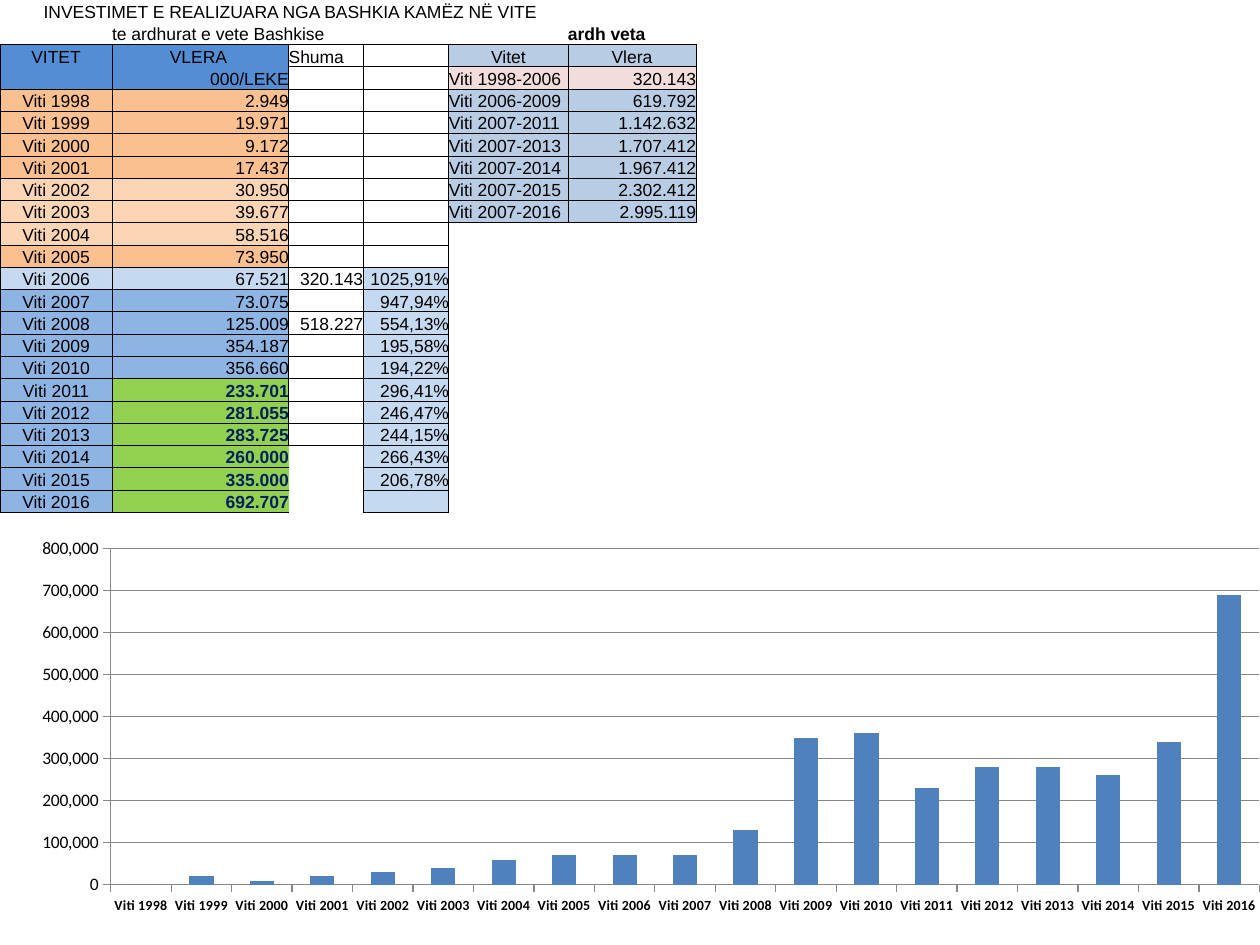
from lxml.etree import SubElement
from pptx import Presentation
from pptx.chart.data import CategoryChartData
from pptx.dml.color import RGBColor
from pptx.enum.chart import XL_CHART_TYPE, XL_TICK_MARK
from pptx.enum.text import MSO_ANCHOR, PP_ALIGN
from pptx.oxml import parse_xml
from pptx.oxml.ns import nsdecls, qn
from pptx.util import Cm, Pt

BLACK, NAVY = "000000", "002060"
BLUE, MID_BLUE, PALE_BLUE, STEEL = "538ED5", "8DB4E3", "C5D9F1", "B8CCE4"
ORANGE, PEACH, GREEN, PINK = "FAC090", "FCD5B4", "92D050", "F2DDDC"
LEFT, CENTER, RIGHT = PP_ALIGN.LEFT, PP_ALIGN.CENTER, PP_ALIGN.RIGHT


def color(code):
    return RGBColor.from_string(code)


def format_cell(cell, sides, text="", align=LEFT, fill=None, ink=BLACK, bold=False):
    """Fill in one cell; sides names its ruled edges by the letters L, R, T, B."""
    cell_format = {"margin_left": 0, "margin_right": 0, "margin_top": 0,
                   "margin_bottom": 0, "vertical_anchor": MSO_ANCHOR.BOTTOM}
    for name, value in cell_format.items():
        setattr(cell, name, value)
    properties = cell._tc.get_or_add_tcPr()
    for side in "LRTB":
        line = SubElement(properties, qn(f"a:ln{side}"), w=str(Pt(0.5)))
        if side in sides:
            paint = SubElement(line, qn("a:solidFill"))
            SubElement(paint, qn("a:srgbClr"), val=BLACK)
        else:
            SubElement(line, qn("a:noFill"))
    if fill:
        cell.fill.solid()
        cell.fill.fore_color.rgb = color(fill)
    else:
        cell.fill.background()
    paragraph = cell.text_frame.paragraphs[0]
    paragraph.alignment = align
    if text:
        run = paragraph.add_run()
        run.text = text
        for name, value in {"size": Pt(10), "name": "Arial", "bold": bold}.items():
            setattr(run.font, name, value)
        run.font.color.rgb = color(ink)
    else:
        SubElement(paragraph._p, qn("a:endParaRPr"), sz="1000")


investments = [
    ("Viti 1998", "2.949"), ("Viti 1999", "19.971"), ("Viti 2000", "9.172"),
    ("Viti 2001", "17.437"), ("Viti 2002", "30.950"), ("Viti 2003", "39.677"),
    ("Viti 2004", "58.516"), ("Viti 2005", "73.950"), ("Viti 2006", "67.521"),
    ("Viti 2007", "73.075"), ("Viti 2008", "125.009"), ("Viti 2009", "354.187"),
    ("Viti 2010", "356.660"), ("Viti 2011", "233.701"), ("Viti 2012", "281.055"),
    ("Viti 2013", "283.725"), ("Viti 2014", "260.000"), ("Viti 2015", "335.000"),
    ("Viti 2016", "692.707"),
]
year_fills = [ORANGE] * 4 + [PEACH] * 3 + [ORANGE, PALE_BLUE] + [MID_BLUE] * 10
percentages = ["1025,91%", "947,94%", "554,13%", "195,58%", "194,22%", "296,41%",
               "246,47%", "244,15%", "266,43%", "206,78%", ""]
periods = [
    ("Viti 1998-2006", "320.143"), ("Viti 2006-2009", "619.792"),
    ("Viti 2007-2011", "1.142.632"), ("Viti 2007-2013", "1.707.412"),
    ("Viti 2007-2014", "1.967.412"), ("Viti 2007-2015", "2.302.412"),
    ("Viti 2007-2016", "2.995.119"),
]

# Cell contents by (row, column)
contents = {
    (0, 0): {"text": "INVESTIMET E REALIZUARA NGA BASHKIA KAMËZ NË VITE"},
    (1, 1): {"text": "te ardhurat e vete Bashkise"},
    (1, 5): {"text": "ardh veta", "bold": True},
    (2, 0): {"text": "VITET", "align": CENTER, "fill": BLUE},
    (2, 1): {"text": "VLERA ", "align": CENTER, "fill": BLUE},
    (2, 2): {"text": "Shuma"},
    (2, 4): {"text": "Vitet", "align": CENTER, "fill": STEEL},
    (2, 5): {"text": "Vlera", "align": CENTER, "fill": STEEL},
    (3, 0): {"fill": BLUE},
    (3, 1): {"text": "000/LEKE", "align": RIGHT, "fill": BLUE},
    (12, 2): {"text": "320.143", "align": RIGHT},
    (14, 2): {"text": "518.227", "align": RIGHT},
}
for row, ((year, amount), fill) in enumerate(zip(investments, year_fills), start=4):
    contents[row, 0] = {"text": year, "align": CENTER, "fill": fill}
    contents[row, 1] = {"text": amount, "align": RIGHT, "fill": fill}
    if row >= 17:
        contents[row, 1].update(fill=GREEN, ink=NAVY, bold=True)
for row, percentage in enumerate(percentages, start=12):
    contents[row, 3] = {"text": percentage, "align": RIGHT, "fill": PALE_BLUE}
for row, (period, total) in enumerate(periods, start=3):
    fill = PINK if row == 3 else STEEL
    contents[row, 4] = {"text": period, "fill": fill}
    contents[row, 5] = {"text": total, "align": RIGHT, "fill": fill}

# Cells that are not ruled on all four sides
ruled_sides = {(2, 0): "LRT", (2, 1): "LRT", (3, 0): "LRB", (3, 1): "LRB"}
for column in range(6):
    ruled_sides[0, column] = ""
    ruled_sides[1, column] = "B"
for row in range(10, 23):
    ruled_sides[row, 4] = "L"
    ruled_sides[row, 5] = ""
for row in range(20, 23):
    ruled_sides[row, 1] = "LTB"
    ruled_sides[row, 2] = "R"
ruled_sides.update({(10, 4): "LT", (10, 5): "T", (20, 2): "RT"})

presentation = Presentation()
presentation.slide_width, presentation.slide_height = Cm(25.4), Cm(19.05)
slide = presentation.slides.add_slide(presentation.slide_layouts[6])

column_widths = [2.26, 3.56, 1.5, 1.73, 2.4, 2.58]
ledger_height = Cm(10.33)
ledger = slide.shapes.add_table(23, 6, 0, 0, Cm(sum(column_widths)), ledger_height).table
ledger.first_row = ledger.horz_banding = False
for column, width in zip(ledger.columns, column_widths):
    column.width = Cm(width)
for row_index, row in enumerate(ledger.rows):
    row.height = ledger_height // 23
    for column_index, cell in enumerate(row.cells):
        place = row_index, column_index
        format_cell(cell, ruled_sides.get(place, "LRTB"), **contents.get(place, {}))
ledger.cell(0, 0).merge(ledger.cell(0, 4))
ledger.cell(0, 0).margin_left = Cm(0.88)
ledger.cell(1, 1).merge(ledger.cell(1, 2))

# The columns show the amounts to the nearest ten thousand
yearly = CategoryChartData(number_format="#,##0")
yearly.categories = [year for year, _ in investments]
yearly.add_series("Series 1", [round(int(amount.replace(".", "")), -4)
                               for _, amount in investments])
chart = slide.shapes.add_chart(XL_CHART_TYPE.COLUMN_STACKED, 0, Cm(10.59),
                               Cm(25.4), Cm(8.46), yearly).chart
chart.has_legend = chart.has_title = False
chart.font.size, chart.font.name = Pt(10), "Calibri"
chart.font.color.rgb = color(BLACK)

columns = chart.plots[0]
for name, value in {"gap_width": 150, "overlap": 100, "vary_by_categories": False}.items():
    setattr(columns, name, value)
columns.series[0].format.fill.solid()
columns.series[0].format.fill.fore_color.rgb = color("4F81BD")

chart.value_axis.has_major_gridlines = True
axis_styles = [(chart.category_axis, 8, True), (chart.value_axis, 10, False)]
for axis, size, bold in axis_styles:
    axis.major_tick_mark = XL_TICK_MARK.OUTSIDE
    labels = axis.tick_labels.font
    for name, value in {"size": Pt(size), "bold": bold, "name": "Calibri"}.items():
        setattr(labels, name, value)
    labels.color.rgb = color(BLACK)
for line in (chart.category_axis.format.line, chart.value_axis.format.line,
             chart.value_axis.major_gridlines.format.line):
    line.width = Pt(0.75)
    line.color.rgb = color("868686")
scale = {"minimum_scale": 0, "maximum_scale": 800000, "major_unit": 100000}
for name, value in scale.items():
    setattr(chart.value_axis, name, value)
chart.value_axis.tick_labels.number_format = "#,##0"
chart.value_axis.tick_labels.number_format_is_linked = False

plot_area = chart._chartSpace.chart.plotArea
for old_layout in plot_area.findall(qn("c:layout")):
    plot_area.remove(old_layout)
plot_area.insert(0, parse_xml(
    f'<c:layout {nsdecls("c")}><c:manualLayout><c:layoutTarget val="inner"/>'
    '<c:xMode val="edge"/><c:yMode val="edge"/><c:x val="0.088"/><c:y val="0.055"/>'
    '<c:w val="0.912"/><c:h val="0.802"/></c:manualLayout></c:layout>'))

presentation.save("out.pptx")
